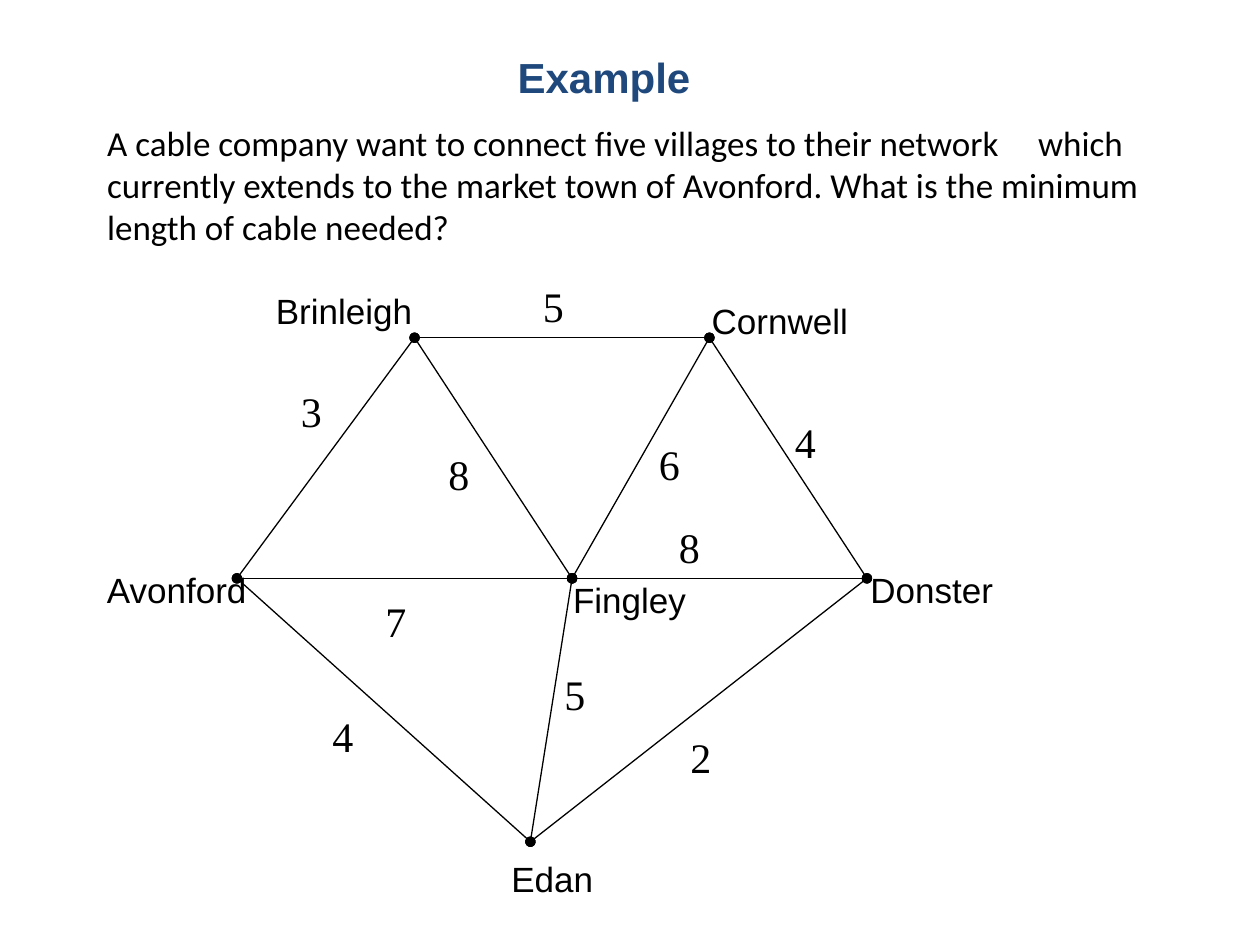
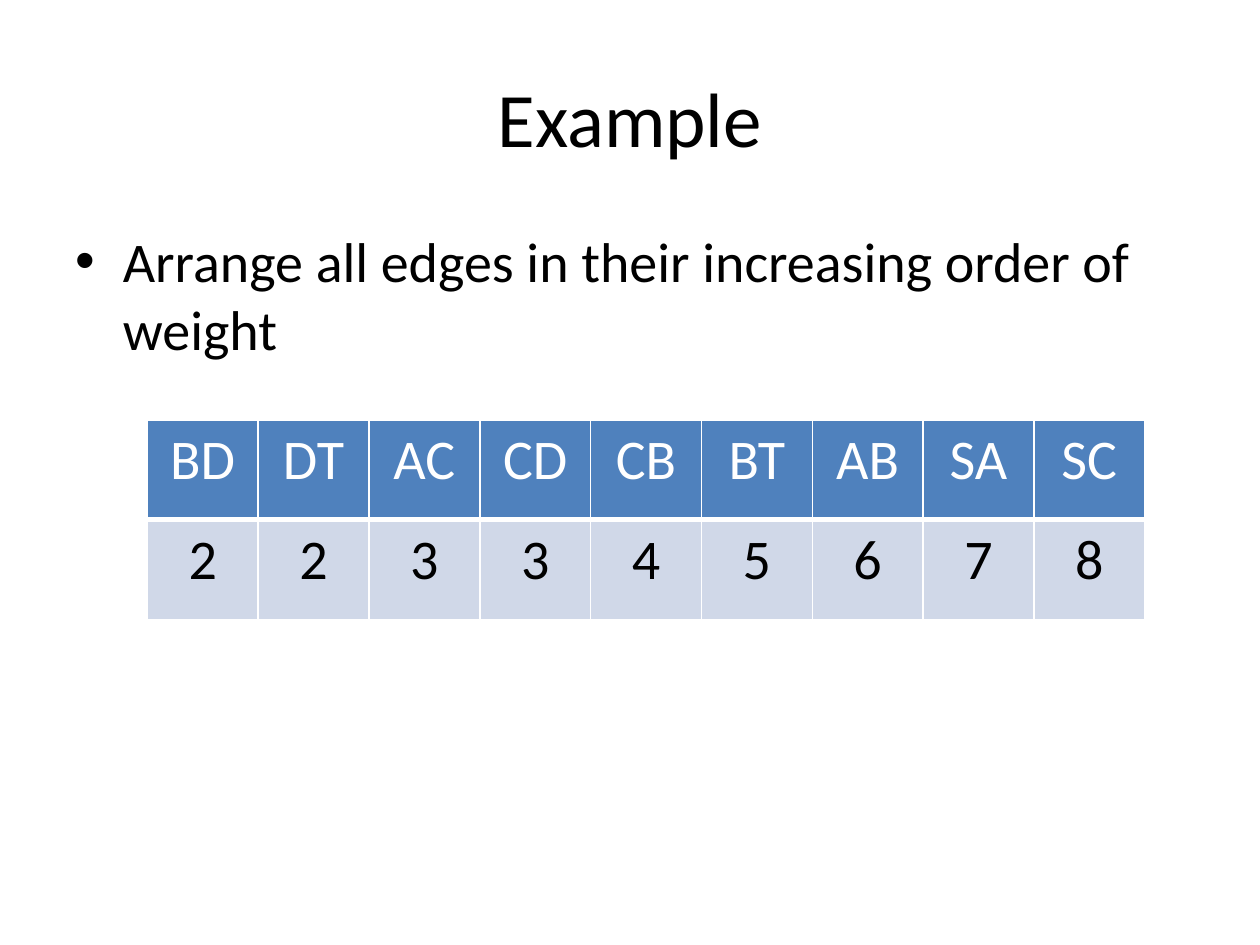
from dataclasses import dataclass

import pptx
import pptx.dml.color
import pptx.enum.shapes
import pptx.enum.text
import pptx.oxml
import pptx.oxml.ns
import pptx.util

Pt = pptx.util.Pt
ALIGN = pptx.enum.text.PP_ALIGN
ANCHOR = pptx.enum.text.MSO_ANCHOR


def color(value):
    return pptx.dml.color.RGBColor.from_string(value)


@dataclass(frozen=True)
class Theme:
    black: str = "000000"
    white: str = "FFFFFF"
    navy: str = "1F497D"
    header: str = "4F81BD"
    band: str = "D0D8E8"
    body_font: str = "Calibri"
    label_font: str = "Arial"
    weight_font: str = "Times New Roman"
    title_size: int = 44
    list_size: int = 32
    heading_size: int = 24
    text_size: int = 20
    edge_width: float = 0.75


THEME = Theme()

# Village: (dot position, label box), relative to the graph box
VILLAGES = {
    "Avonford": ((81.4, 173.5), (0, 164.1, 96.5, 31)),
    "Brinleigh": ((182.9, 36), (96.5, 5, 93, 31)),
    "Cornwell": ((351.4, 36), (345.6, 10.8, 102, 31)),
    "Donster": ((441.4, 173.5), (436.3, 164.1, 109, 31)),
    "Edan": ((249.1, 324), (231.1, 329.7, 75, 31)),
    "Fingley": ((272.9, 173.5), (266.4, 169.9, 83.5, 31)),
}

# Start, end, cable length, corner of the length label
EDGES = [
    ("Avonford", "Brinleigh", 3, (110.9, 59.7)),
    ("Brinleigh", "Cornwell", 5, (249.1, 0)),
    ("Cornwell", "Donster", 4, (393.1, 77.7)),
    ("Avonford", "Fingley", 7, (159.1, 180)),
    ("Fingley", "Donster", 8, (326.9, 137.5)),
    ("Brinleigh", "Fingley", 8, (195.1, 95.7)),
    ("Cornwell", "Fingley", 6, (315.4, 90)),
    ("Avonford", "Edan", 4, (128.9, 245.5)),
    ("Edan", "Fingley", 5, (261.4, 221.7)),
    ("Edan", "Donster", 2, (333.4, 257.7)),
]

SORTED_EDGES = [("BD", 2), ("DT", 2), ("AC", 3), ("CD", 3), ("CB", 4),
                ("BT", 5), ("AB", 6), ("SA", 7), ("SC", 8)]


# Shared helpers
def set_values(target, values):
    for name, value in values.items():
        setattr(target, name, value)


def place(shape, box):
    set_values(shape, dict(zip(("left", "top", "width", "height"), map(Pt, box))))


def write(frame, text, size, font, ink=THEME.black, bold=False,
          align=ALIGN.LEFT, tab_stop=None):
    paragraph = frame.paragraphs[0]
    paragraph.text = text
    set_values(paragraph, {"alignment": align, "space_before": Pt(0)})
    if tab_stop:
        tabs = pptx.oxml.parse_xml(
            f'<a:tabLst {pptx.oxml.ns.nsdecls("a")}>'
            f'<a:tab pos="{Pt(tab_stop)}" algn="l"/></a:tabLst>')
        paragraph._p.get_or_add_pPr().append(tabs)
    for run in paragraph.runs:
        set_values(run.font, {"size": Pt(size), "name": font, "bold": bold})
        run.font.color.rgb = color(ink)


def add_label(shapes, box, text, size, font, wrap=True, **style):
    shape = shapes.add_textbox(*map(Pt, box))
    shape.text_frame.word_wrap = wrap
    write(shape.text_frame, text, size, font, **style)


def add_title(slide, box, text, size, **style):
    title = slide.shapes.title
    place(title, box)
    title.text_frame.vertical_anchor = ANCHOR.MIDDLE
    write(title.text_frame, text, size, THEME.body_font, **style)


def add_edge(shapes, start, end):
    connector = shapes.add_connector(
        pptx.enum.shapes.MSO_CONNECTOR.STRAIGHT, *map(Pt, (*start, *end)))
    connector.line.color.rgb = color(THEME.black)
    connector.line.width = Pt(THEME.edge_width)
    line = connector.line._get_or_add_ln()
    for tag in ("headEnd", "tailEnd"):
        line.append(pptx.oxml.parse_xml(
            f'<a:{tag} {pptx.oxml.ns.nsdecls("a")} type="oval"/>'))
    connector._element.spPr.append(pptx.oxml.parse_xml(
        f'<a:effectLst {pptx.oxml.ns.nsdecls("a")}/>'))


def set_border(cell, side, width):
    cell._tc.get_or_add_tcPr().append(pptx.oxml.parse_xml(
        f'<a:{side} {pptx.oxml.ns.nsdecls("a")} w="{Pt(width)}"><a:solidFill>'
        f'<a:srgbClr val="{THEME.white}"/></a:solidFill></a:{side}>'))


# Regions
def draw_graph(slide, left, top):
    shapes = slide.shapes.add_group_shape().shapes

    def shift(x, y, *size):
        return (left + x, top + y, *size)

    for start, end, length, corner in EDGES:
        add_edge(shapes, shift(*VILLAGES[start][0]), shift(*VILLAGES[end][0]))
        add_label(shapes, shift(*corner, 36, 36), str(length),
                  THEME.heading_size, THEME.weight_font)
    for village, (_, box) in VILLAGES.items():
        add_label(shapes, shift(*box), village, THEME.text_size, THEME.label_font)


def draw_edge_table(slide, box):
    rows = list(zip(*SORTED_EDGES))
    table = slide.shapes.add_table(
        len(rows), len(SORTED_EDGES), *map(Pt, box)).table
    styles = [(THEME.header, THEME.white, 3), (THEME.band, THEME.black, 1)]
    for row_index, (values, (fill, ink, bottom)) in enumerate(zip(rows, styles)):
        for column_index, value in enumerate(values):
            cell = table.cell(row_index, column_index)
            write(cell.text_frame, str(value), THEME.list_size, THEME.body_font,
                  ink=ink, align=ALIGN.CENTER)
            for side, width in (("lnL", 1), ("lnR", 1), ("lnT", 1), ("lnB", bottom)):
                set_border(cell, side, width)
            cell.fill.solid()
            cell.fill.fore_color.rgb = color(fill)


# Slides
def build_problem_slide(presentation):
    slide = presentation.slides.add_slide(presentation.slide_layouts[5])
    add_title(slide, (54, 60.5, 612, 90),
              "A cable company want to connect five villages to their network\t"
              "which currently extends to the market town of Avonford. "
              "What is the minimum length of cable needed?",
              THEME.text_size, tab_stop=532)
    draw_graph(slide, 54, 157)
    add_label(slide.shapes, (288.7, 26, 113, 36), "Example", THEME.heading_size,
              THEME.label_font, wrap=False, ink=THEME.navy, bold=True)


def build_sorting_slide(presentation):
    slide = presentation.slides.add_slide(presentation.slide_layouts[1])
    add_title(slide, (36, 21.6, 648, 90), "Example", THEME.title_size,
              align=ALIGN.CENTER)
    body = slide.placeholders[1]
    place(body, (36, 126, 648, 356.4))
    write(body.text_frame, "Arrange all edges in their increasing order of weight",
          THEME.list_size, THEME.body_font)
    draw_edge_table(slide, (84.2, 240, 570, 114))


def main():
    presentation = pptx.Presentation()
    set_values(presentation, {"slide_width": Pt(720), "slide_height": Pt(540)})
    build_problem_slide(presentation)
    build_sorting_slide(presentation)
    presentation.save("out.pptx")


if __name__ == "__main__":
    main()
